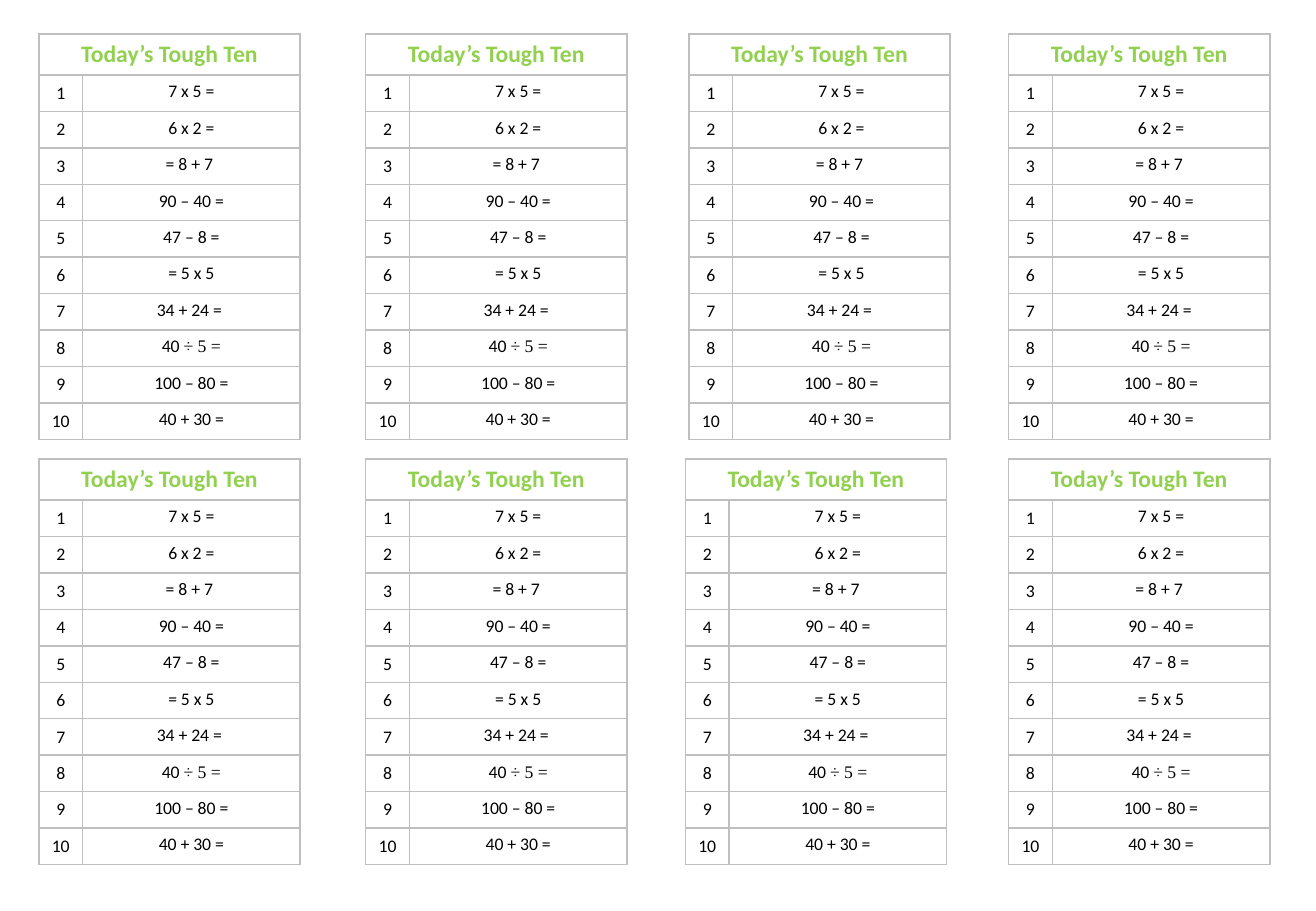
from dataclasses import dataclass

from lxml.etree import SubElement
from pptx import Presentation
from pptx.dml.color import RGBColor
from pptx.enum.text import MSO_ANCHOR, PP_ALIGN
from pptx.oxml.ns import qn
from pptx.util import Inches, Pt


@dataclass(frozen=True)
class Theme:
    title: str = "92D050"
    ink: str = "000000"
    grid: str = "BFBFBF"
    font: str = "Calibri"
    serif: str = "Times New Roman"
    large: float = 14
    small: float = 10.5
    line: float = 1


# Wording: each sum is a list of runs, the second one in the serif font
TITLE = "Today’s Tough Ten"
SUMS = [
    ["7 x 5 ="],
    ["6 x 2 ="],
    ["= 8 + 7 "],
    ["90 – 40 ="],
    ["47 – 8 ="],
    ["= 5 x 5"],
    ["34 + 24 = "],
    ["40 ", "÷ 5 ="],
    ["100 – 80 ="],
    ["40 + 30 ="],
]

# Card layout: top edge and the left edges in that row
CARDS = {
    0.28: (0.32, 3.01, 5.67, 8.3),
    3.78: (0.32, 3.01, 5.64, 8.3),
}
WIDTHS = (0.36, 1.79)
HEAD, ROW = 0.33, 0.3


class Sheet:
    def __init__(self, slide, theme):
        self.slide = slide
        self.theme = theme

    def border(self, cell):
        props = cell._tc.get_or_add_tcPr()
        for side in ("a:lnL", "a:lnR", "a:lnT", "a:lnB"):
            line = SubElement(props, qn(side), w=str(Pt(self.theme.line)))
            fill = SubElement(line, qn("a:solidFill"))
            SubElement(fill, qn("a:srgbClr"), val=self.theme.grid)

    def label(self, cell, parts, size, color, bold=False):
        para = cell.text_frame.paragraphs[0]
        para.alignment = PP_ALIGN.CENTER
        for part, face in zip(parts, (self.theme.font, self.theme.serif)):
            run = para.add_run()
            run.text = part
            run.font.name = face
            run.font.size = Pt(size)
            run.font.bold = bold
            run.font.color.rgb = RGBColor.from_string(color)

    def card(self, left, top):
        theme = self.theme
        count = len(SUMS)
        frame = self.slide.shapes.add_table(
            count + 1, len(WIDTHS), Inches(left), Inches(top),
            Inches(sum(WIDTHS)), Inches(HEAD + count * ROW))
        table = frame.table
        table.first_row = table.horz_banding = False
        for col, width in zip(table.columns, WIDTHS):
            col.width = Inches(width)
        for index, row in enumerate(table.rows):
            row.height = Inches(ROW if index else HEAD)
            for cell in row.cells:
                self.border(cell)
                cell.fill.background()

        # Title across both columns
        head = table.cell(0, 0)
        head.merge(table.cell(0, 1))
        self.label(head, [TITLE], theme.large, theme.title, bold=True)

        # Numbered sums
        for number, parts in enumerate(SUMS, 1):
            first = table.cell(number, 0)
            first.vertical_anchor = MSO_ANCHOR.MIDDLE
            self.label(first, [str(number)], theme.small, theme.ink)
            self.label(table.cell(number, 1), parts, theme.small, theme.ink)


def main():
    deck = Presentation()
    deck.slide_width, deck.slide_height = Inches(10.83), Inches(7.5)
    sheet = Sheet(deck.slides.add_slide(deck.slide_layouts[6]), Theme())
    for top, lefts in CARDS.items():
        for left in lefts:
            sheet.card(left, top)
    deck.save("out.pptx")


if __name__ == "__main__":
    main()
